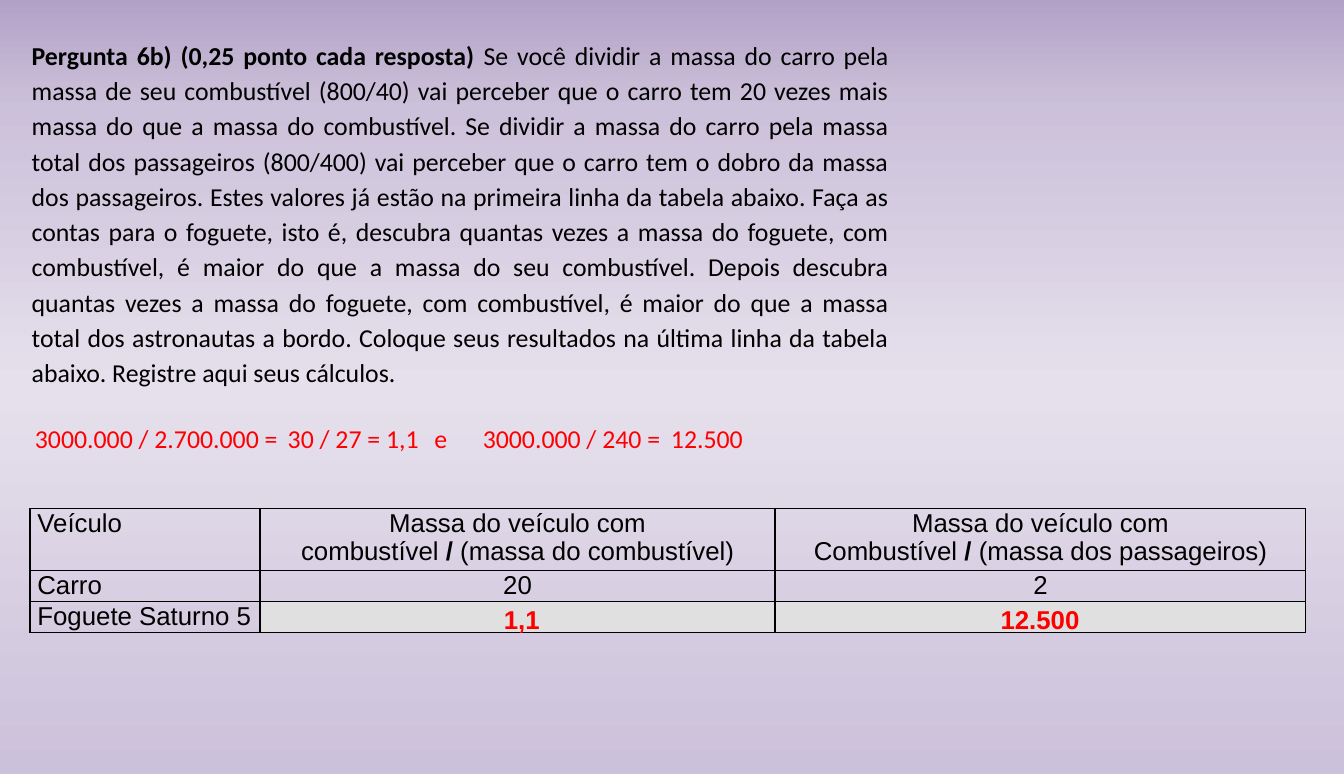
from lxml import etree
from pptx import Presentation
from pptx.dml.color import RGBColor
from pptx.enum.text import MSO_AUTO_SIZE, PP_ALIGN
from pptx.oxml.ns import qn
from pptx.util import Cm, Pt

LEFT, MID, FULL = PP_ALIGN.LEFT, PP_ALIGN.CENTER, PP_ALIGN.JUSTIFY
FIT = MSO_AUTO_SIZE.SHAPE_TO_FIT_TEXT

BLACK = RGBColor(0x00, 0x00, 0x00)
RED = RGBColor(0xFF, 0x00, 0x00)
GRAY = RGBColor(0xE0, 0xE0, 0xE0)
STOPS = [
    (0, RGBColor(0xB3, 0xA2, 0xC7)),
    (14, RGBColor(0xCC, 0xC1, 0xDA)),
    (50, RGBColor(0xE6, 0xE0, 0xEC)),
    (100, RGBColor(0xCC, 0xC1, 0xDA)),
]

TASK = (
    "Se você dividir a massa do carro pela massa de seu combustível (800/40) "
    "vai perceber que o carro tem 20 vezes mais massa do que a massa do "
    "combustível. Se dividir a massa do carro pela massa total dos passageiros "
    "(800/400) vai perceber que o carro tem o dobro da massa dos passageiros. "
    "Estes valores já estão na primeira linha da tabela abaixo. Faça as contas "
    "para o foguete, isto é, descubra quantas vezes a massa do foguete, com "
    "combustível, é maior do que a massa do seu combustível. Depois descubra "
    "quantas vezes a massa do foguete, com combustível, é maior do que a massa "
    "total dos astronautas a bordo. Coloque seus resultados na última linha da "
    "tabela abaixo. Registre aqui seus cálculos."
)

# Text, left and width of each part of the sum
SUMS = [
    ("3000.000 / 2.700.000 =", 0.61, 6.55),
    ("30 / 27 =", 6.83, 2.82),
    ("1,1", 9.25, 1.47),
    ("e", 10.44, 0.84),
    ("3000.000 / 240 =", 11.63, 4.95),
    ("12.500", 16.26, 2.49),
]
MARKS = [("1,1", 12.14, 1.4), ("12.500", 24.36, 2.46)]

# Each cell is a list of lines; each line is a list of (text, bold) runs
ROWS = [
    [
        [[("Veículo", False)]],
        [[("Massa do veículo com", False)],
         [("combustível ", False), ("/ ", True), ("(massa do combustível)", False)]],
        [[("Massa do veículo com", False)],
         [("Combustível ", False), ("/ ", True), ("(massa dos passageiros)", False)]],
    ],
    [[[("Carro", False)]], [[("20", False)]], [[("2", False)]]],
    [[[("Foguete Saturno 5", False)]], [], []],
]
WIDTHS = [5.66, 12.67, 13.06]
HEIGHTS = [1.52, 0.76, 0.76]


def write(frame, lines, font="Calibri", color=BLACK, align=LEFT, space=None):
    for i, line in enumerate(lines):
        para = frame.paragraphs[0] if i == 0 else frame.add_paragraph()
        para.alignment = align
        para.line_spacing = space
        for text, bold in line:
            run = para.add_run()
            run.text = text
            run.font.name = font
            run.font.size = Pt(18)
            run.font.bold = bold
            run.font.color.rgb = color


def add_box(slide, lines, left, top, width, height=1.02, wrap=False, **style):
    box = slide.shapes.add_textbox(Cm(left), Cm(top), Cm(width), Cm(height))
    box.text_frame.word_wrap = wrap
    box.text_frame.auto_size = FIT
    write(box.text_frame, lines, **style)


def add_back(slide):
    fill = slide.background.fill
    fill.gradient()
    fill.gradient_angle = 270
    stops = slide.element.find(".//" + qn("a:gsLst"))
    for old in list(stops):
        stops.remove(old)
    for pos, color in STOPS:
        stop = etree.SubElement(stops, qn("a:gs"), pos=str(pos * 1000))
        etree.SubElement(stop, qn("a:srgbClr"), val=str(color))


def add_edges(cell):
    props = cell._tc.get_or_add_tcPr()
    for side in "LRTB":
        line = etree.SubElement(props, qn("a:ln" + side), w=str(Pt(1)))
        fill = etree.SubElement(line, qn("a:solidFill"))
        etree.SubElement(fill, qn("a:srgbClr"), val=str(BLACK))


def add_grid(slide, left, top):
    table = slide.shapes.add_table(
        len(ROWS), len(WIDTHS), Cm(left), Cm(top),
        Cm(sum(WIDTHS)), Cm(sum(HEIGHTS))).table
    table.first_row = table.horz_banding = False
    for col, width in zip(table.columns, WIDTHS):
        col.width = Cm(width)
    for r, row in enumerate(ROWS):
        table.rows[r].height = Cm(HEIGHTS[r])
        for c, lines in enumerate(row):
            cell = table.cell(r, c)
            cell.margin_left = cell.margin_right = Cm(0.18)
            cell.margin_top = cell.margin_bottom = 0
            add_edges(cell)
            if lines:
                cell.fill.background()
                write(cell.text_frame, lines, font="Arial",
                      align=MID if c else FULL)
            else:
                cell.fill.solid()
                cell.fill.fore_color.rgb = GRAY


def main():
    deck = Presentation()
    deck.slide_width, deck.slide_height = Cm(33.07), Cm(19.05)
    slide = deck.slides.add_slide(deck.slide_layouts.get_by_name("Blank"))
    add_back(slide)

    # Question
    add_box(slide, [[("Pergunta 6b) (0,25 ponto cada resposta) ", True), (TASK, False)]],
            0.53, 0.74, 21.59, 8.97, wrap=True, align=FULL, space=1.14)

    # Sums
    for text, left, width in SUMS:
        add_box(slide, [[(text, False)]], left, 10.29, width, color=RED)

    # Table and answers
    add_grid(slide, 0.74, 12.52)
    for text, left, width in MARKS:
        add_box(slide, [[(text, True)]], left, 14.73, width,
                font="Arial", color=RED, align=MID)

    deck.save("out.pptx")


if __name__ == "__main__":
    main()
